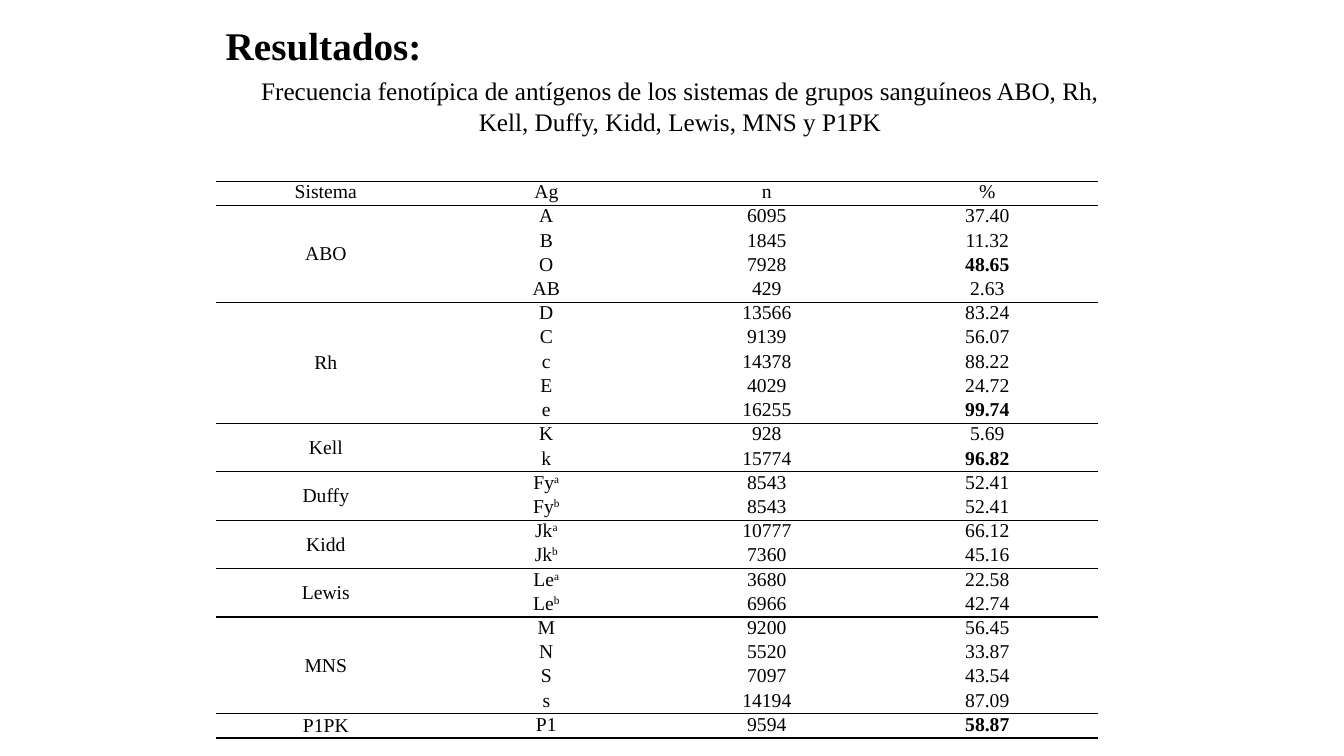
from dataclasses import dataclass

from lxml import etree
from pptx import Presentation
from pptx import util as u
from pptx.dml import color
from pptx.enum import text
from pptx.oxml import ns

Pt = u.Pt


@dataclass(frozen=True)
class Theme:
    font: str = "Times New Roman"
    ink: str = "000000"
    title: int = 28
    subtitle: int = 18
    table: int = 14
    rule: int = 1


THEME = Theme()

HEADER = ("Sistema", "Ag", "n", "%")
# Antigen, count, percentage; "^" starts a superscript, "*" marks a bold value
SYSTEMS = {
    "ABO": [("A", "6095", "37.40"), ("B", "1845", "11.32"),
            ("O", "7928", "*48.65"), ("AB", "429", "2.63")],
    "Rh": [("D", "13566", "83.24"), ("C", "9139", "56.07"),
           ("c", "14378", "88.22"), ("E", "4029", "24.72"),
           ("e", "16255", "*99.74")],
    "Kell": [("K", "928", "5.69"), ("k", "15774", "*96.82")],
    "Duffy": [("Fy^a", "8543", "52.41"), ("Fy^b", "8543", "52.41")],
    "Kidd": [("Jk^a", "10777", "66.12"), ("Jk^b", "7360", "45.16")],
    "Lewis": [("Le^a", "3680", "22.58"), ("Le^b", "6966", "42.74")],
    "MNS": [("M", "9200", "56.45"), ("N", "5520", "33.87"),
            ("S", "7097", "43.54"), ("s", "14194", "87.09")],
    "P1PK": [("P1", "9594", "*58.87")],
}


def style_para(para, size, bold=False, align=text.PP_ALIGN.CENTER):
    para.alignment = align
    for span in para.runs:
        span.font.name = THEME.font
        span.font.size = Pt(size)
        span.font.bold = bold
        span.font.color.rgb = color.RGBColor.from_string(THEME.ink)


def place(shape, box):
    shape.left, shape.top, shape.width, shape.height = map(Pt, box)


def add_title(page, box):
    title = page.shapes.title
    place(title, box)
    frame = title.text_frame
    frame.text = "Resultados:"
    frame.auto_size = text.MSO_AUTO_SIZE.NONE
    frame.vertical_anchor = text.MSO_ANCHOR.TOP
    style_para(frame.paragraphs[0], THEME.title, True, text.PP_ALIGN.LEFT)


def add_subtitle(page, box):
    frame = page.shapes.add_textbox(*map(Pt, box)).text_frame
    frame.word_wrap = True
    frame.text = ("Frecuencia fenotípica de antígenos de los sistemas de grupos "
                  "sanguíneos ABO, Rh, Kell, Duffy, Kidd, Lewis, MNS y P1PK")
    style_para(frame.paragraphs[0], THEME.subtitle)


def set_borders(cell, top, bottom):
    props = cell._tc.get_or_add_tcPr()
    for side, ruled in (("L", False), ("R", False), ("T", top), ("B", bottom)):
        line = etree.SubElement(props, ns.qn(f"a:ln{side}"), w=str(Pt(THEME.rule)))
        if ruled:
            fill = etree.SubElement(line, ns.qn("a:solidFill"))
            etree.SubElement(fill, ns.qn("a:srgbClr"), val=THEME.ink)
        else:
            etree.SubElement(line, ns.qn("a:noFill"))


def fill_cell(cell, value):
    para = cell.text_frame.paragraphs[0]
    base, _, raised = value.lstrip("*").partition("^")
    para.text = base
    if raised:
        span = para.add_run()
        span.text = raised
        span._r.get_or_add_rPr().set("baseline", "30000")
    style_para(para, THEME.table, value.startswith("*"))


def add_frequency_table(page, box):
    groups = [[HEADER]] + [
        [(system if i == 0 else "", *values) for i, values in enumerate(antigens)]
        for system, antigens in SYSTEMS.items()]
    row_count = sum(map(len, groups))
    table = page.shapes.add_table(row_count, len(HEADER), *map(Pt, box)).table
    table.first_row = table.horz_banding = False
    for row in table.rows:
        row.height = Pt(box[3] / row_count)

    start = 0
    for group in groups:
        end = start + len(group) - 1
        for r, values in enumerate(group, start):
            for c, value in enumerate(values):
                cell = table.cell(r, c)
                cell.margin_left = cell.margin_right = Pt(4.5)
                cell.margin_top = cell.margin_bottom = 0
                # A rule runs above and below each blood group system
                set_borders(cell, r == start, r == end)
                cell.fill.background()
                if value:
                    fill_cell(cell, value)
        if start > 0:
            system_cell = table.cell(start, 0)
            system_cell.vertical_anchor = text.MSO_ANCHOR.MIDDLE
            if end > start:
                system_cell.merge(table.cell(end, 0))
        start = end + 1


def main():
    deck = Presentation()
    deck.slide_width, deck.slide_height = Pt(960), Pt(540)
    page = deck.slides.add_slide(deck.slide_layouts[5])
    # Table first, headings in front
    add_frequency_table(page, (154, 129.5, 630, 398.2))
    add_title(page, (154, 11.5, 641.5, 41))
    add_subtitle(page, (165, 50.5, 641.5, 51))
    deck.save("out.pptx")


if __name__ == "__main__":
    main()
